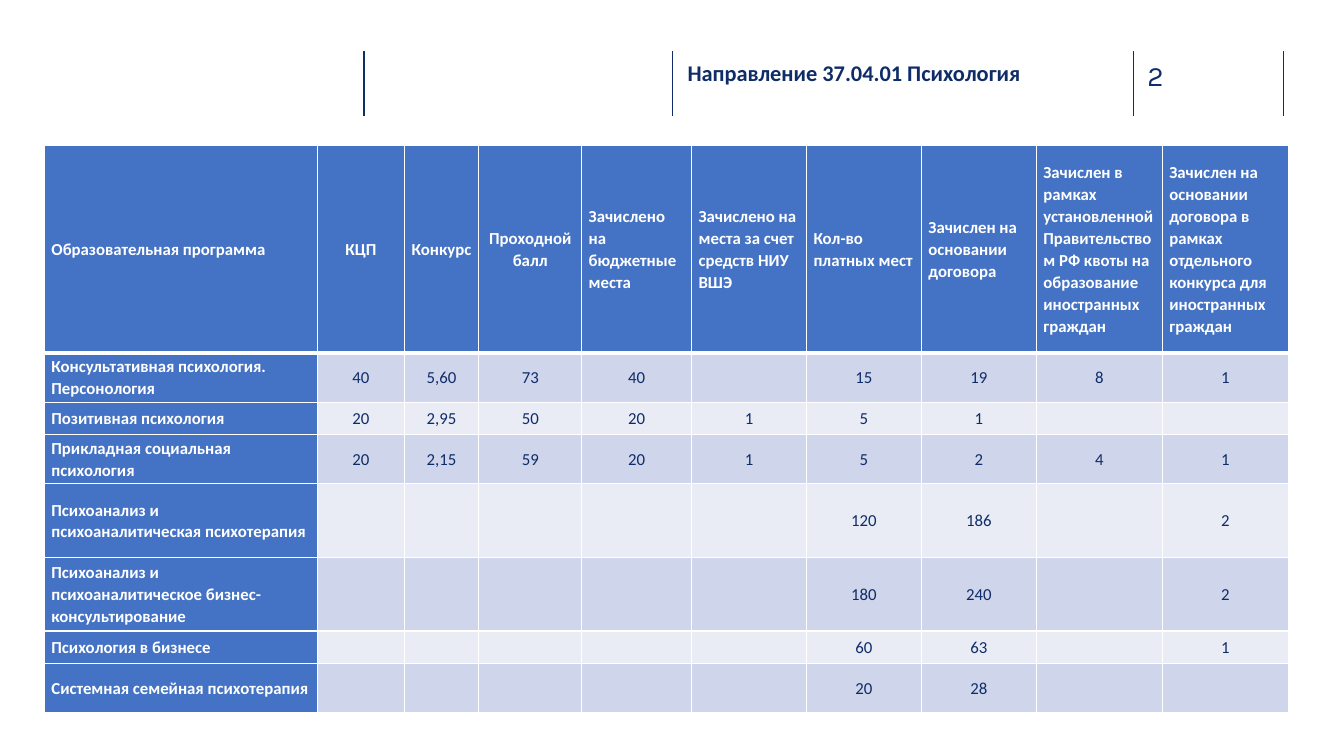
"""Build the admissions table slide for the psychology programmes."""
from dataclasses import dataclass

from lxml import etree
from pptx import Presentation
from pptx import util as u
from pptx.dml import color
from pptx.enum import shapes, text
from pptx.oxml import ns

COLORS = {
    "rule": "102D69",
    "navy": "0F2C68",
    "white": "FFFFFF",
    "blue": "4472C4",
    "band_dark": "CFD5EA",
    "band_light": "E9EBF5",
}
RULE_POSITIONS = (3.61, 6.67, 11.24, 12.73)
RULE_TOP, RULE_BOTTOM = 0.51, 1.15
COLUMN_WIDTHS = (2.71, 0.86, 0.74, 1.02, 1.09, 1.14, 1.14, 1.14, 1.25, 1.25)
ROW_HEIGHTS = (2.06, 0.49, 0.32, 0.49, 0.73, 0.73, 0.32, 0.49)
CENTERED_HEADINGS = (1, 2, 3)
HEADINGS = (
    "Образовательная программа",
    "КЦП",
    "Конкурс",
    "Проходной балл",
    "Зачислено на бюджетные места",
    "Зачислено на места за счет средств НИУ ВШЭ",
    "Кол-во платных мест",
    "Зачислен на основании договора",
    "Зачислен в рамках установленной Правительством РФ квоты на образование иностранных граждан",
    "Зачислен на основании договора в рамках отдельного конкурса для иностранных граждан",
)


@dataclass
class Programme:
    name: str
    paid_places: str
    contract: str
    budget: tuple[str, ...] = ("",) * 5
    quota: str = ""
    foreign_contract: str = ""

    def values(self) -> tuple[str, ...]:
        return (self.name, *self.budget, self.paid_places, self.contract,
                self.quota, self.foreign_contract)


@dataclass
class Label:
    content: str
    left: float
    top: float
    width: float
    height: float
    size: int
    font: str
    color: str
    bold: bool = False


PROGRAMMES = (
    Programme("Консультативная психология. Персонология", "15", "19",
              ("40", "5,60", "73", "40", ""), "8", "1"),
    Programme("Позитивная психология", "5", "1", ("20", "2,95", "50", "20", "1")),
    Programme("Прикладная социальная психология", "5", "2",
              ("20", "2,15", "59", "20", "1"), "4", "1"),
    Programme("Психоанализ и психоаналитическая психотерапия", "120", "186",
              foreign_contract="2"),
    Programme("Психоанализ и психоаналитическое бизнес-консультирование", "180", "240",
              foreign_contract="2"),
    Programme("Психология в бизнесе", "60", "63", foreign_contract="1"),
    Programme("Системная семейная психотерапия", "20", "28"),
)
LABELS = (
    Label("2", 11.38, 0.58, 0.73, 0.34, 20, "Karla", "rule"),
    Label("Направление 37.04.01 Психология", 6.82, 0.59, 4.3, 0.45, 16, "Calibri", "navy", True),
)


def rgb(name: str) -> color.RGBColor:
    return color.RGBColor.from_string(COLORS[name])


def write_text(frame, content: str, *, size: int = 12, font: str = "Calibri",
               color_name: str = "navy", bold: bool = False, centered: bool = False,
               line_spacing: float = 1.0) -> None:
    frame.word_wrap = True
    paragraph = frame.paragraphs[0]
    paragraph.alignment = text.PP_ALIGN.CENTER if centered else text.PP_ALIGN.LEFT
    paragraph.line_spacing = line_spacing
    run = paragraph.add_run()
    run.text = content
    run.font.size = u.Pt(size)
    run.font.name = font
    run.font.bold = bold
    run.font.color.rgb = rgb(color_name)


def add_rule(slide, left: float) -> None:
    rule = slide.shapes.add_connector(
        shapes.MSO_CONNECTOR.STRAIGHT, u.Inches(left), u.Inches(RULE_TOP),
        u.Inches(left), u.Inches(RULE_BOTTOM))
    rule.line.color.rgb = rgb("rule")
    rule.line.width = u.Pt(1)
    etree.SubElement(rule._element.spPr, ns.qn("a:effectLst"))


def add_label(slide, label: Label) -> None:
    box = slide.shapes.add_textbox(u.Inches(label.left), u.Inches(label.top),
                                   u.Inches(label.width), u.Inches(label.height))
    frame = box.text_frame
    frame.margin_left = frame.margin_right = frame.margin_top = frame.margin_bottom = 0
    write_text(frame, label.content, size=label.size, font=label.font,
               color_name=label.color, bold=label.bold)


def add_borders(cell, top: float, bottom: float) -> None:
    properties = cell._tc.get_or_add_tcPr()
    for side, width in (("L", 1), ("R", 1), ("T", top), ("B", bottom)):
        line = etree.SubElement(properties, ns.qn(f"a:ln{side}"), w=str(u.Pt(width)))
        fill = etree.SubElement(line, ns.qn("a:solidFill"))
        etree.SubElement(fill, ns.qn("a:srgbClr"), val=COLORS["white"])


def fill_cell(cell, content: str, row: int, column: int) -> None:
    heading = row == 0 or column == 0
    add_borders(cell, top=3 if row == 1 else 1, bottom=3 if row == 0 else 1)
    cell.fill.solid()
    band = "band_dark" if row % 2 else "band_light"
    cell.fill.fore_color.rgb = rgb("blue" if heading else band)
    cell.margin_left = cell.margin_right = u.Inches(0.07)
    cell.margin_top = cell.margin_bottom = 0
    cell.vertical_anchor = text.MSO_ANCHOR.MIDDLE
    if content:
        write_text(cell.text_frame, content, bold=heading, line_spacing=1.07,
                   color_name="white" if heading else "navy",
                   centered=column in CENTERED_HEADINGS if row == 0 else column > 0)


def add_admissions_table(slide) -> None:
    rows = (HEADINGS, *(programme.values() for programme in PROGRAMMES))
    table = slide.shapes.add_table(
        len(rows), len(HEADINGS), u.Inches(0.44), u.Inches(1.44),
        u.Inches(sum(COLUMN_WIDTHS)), u.Inches(sum(ROW_HEIGHTS))).table
    for column, width in zip(table.columns, COLUMN_WIDTHS):
        column.width = u.Inches(width)
    for row, height in zip(table.rows, ROW_HEIGHTS):
        row.height = u.Inches(height)
    for row_index, values in enumerate(rows):
        for column_index, content in enumerate(values):
            fill_cell(table.cell(row_index, column_index), content, row_index, column_index)


def main() -> None:
    presentation = Presentation()
    presentation.slide_width = u.Inches(13.33)
    presentation.slide_height = u.Inches(7.5)
    slide = presentation.slides.add_slide(presentation.slide_layouts[6])
    for left in RULE_POSITIONS:
        add_rule(slide, left)
    for label in LABELS:
        add_label(slide, label)
    add_admissions_table(slide)
    presentation.save("out.pptx")


if __name__ == "__main__":
    main()
